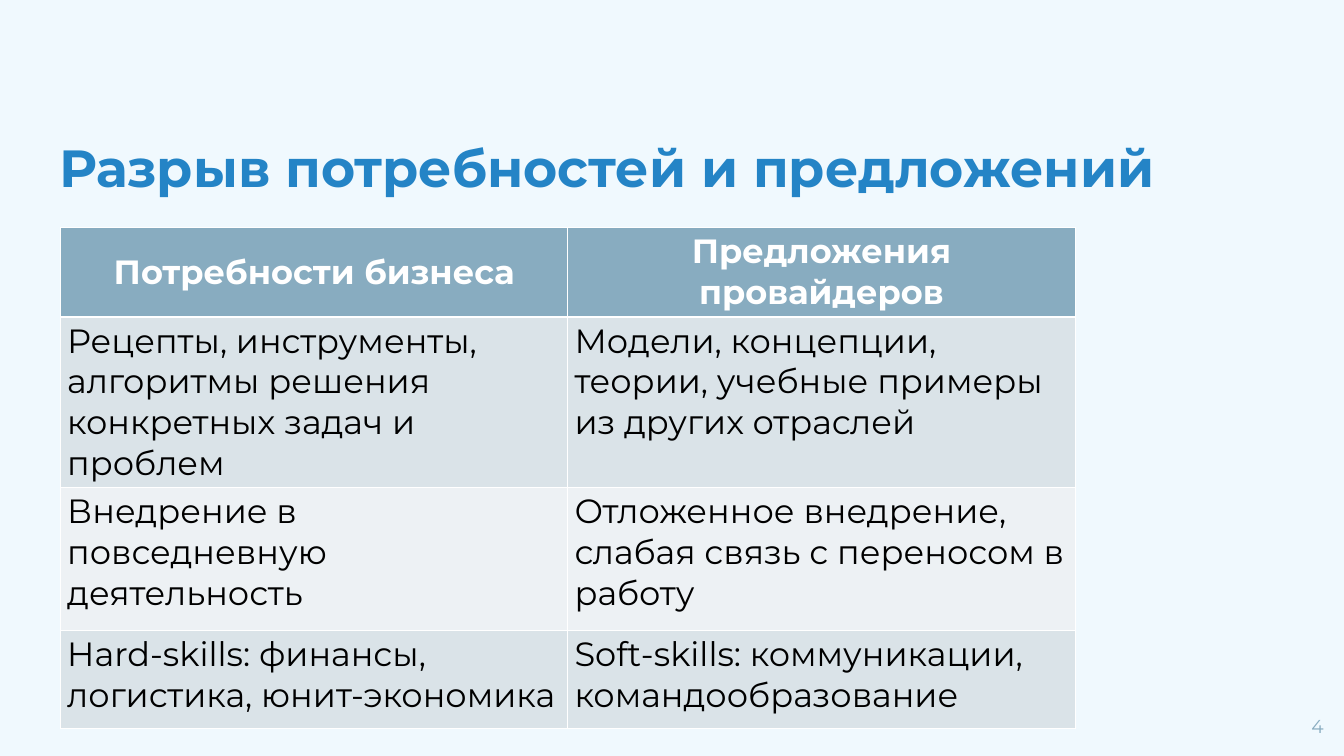
from lxml import etree
from pptx import Presentation
from pptx import util as u
from pptx.dml.color import RGBColor
from pptx.enum import text
from pptx.oxml.ns import qn

WIDTH, HEIGHT = u.Inches(20), u.Inches(11.25)
COL, ROW = WIDTH / 200, HEIGHT / 225
FONT = "Montserrat"
BLUE, STEEL, WHITE, BLACK = "2484C6", "88ACC0", "FFFFFF", "000000"
BANDS = ["DAE3E8", "EDF1F4"]
NEEDS_AND_OFFERS = [
    ("Потребности бизнеса", "Предложения провайдеров"),
    ("Рецепты, инструменты, алгоритмы решения конкретных задач и проблем",
     "Модели, концепции, теории, учебные примеры из других отраслей"),
    ("Внедрение в повседневную деятельность",
     "Отложенное внедрение, слабая связь с переносом в работу"),
    ("Hard-skills: финансы, логистика, юнит-экономика",
     "Soft-skills: коммуникации, командообразование"),
]
ROW_HEIGHTS = [26.8, 42.6, 42.6, 29.2]


def rgb(value):
    """Turn a hex string into a colour."""
    return RGBColor.from_string(value)


def grid(left, top, width, height):
    """Turn a box in grid columns and rows into slide lengths."""
    return int(left * COL), int(top * ROW), int(width * COL), int(height * ROW)


def write(tf, content, size, color, bold=False, align=text.PP_ALIGN.LEFT):
    """Fill a text frame with one formatted paragraph."""
    tf.text = content
    tf.word_wrap = True
    p = tf.paragraphs[0]
    p.alignment = align
    font = p.runs[0].font
    font.name, font.size, font.bold = FONT, u.Pt(size), bold
    font.color.rgb = rgb(color)


def place_text(sp, box, anchor):
    """Place a text shape in its box with even margins."""
    sp.left, sp.top, sp.width, sp.height = box
    tf = sp.text_frame
    tf.auto_size = text.MSO_AUTO_SIZE.NONE
    tf.vertical_anchor = anchor
    tf.margin_left = tf.margin_top = tf.margin_right = tf.margin_bottom = u.Inches(0.2)
    return tf


def add_title(s, box):
    """Format the title placeholder."""
    tf = place_text(s.shapes.title, box, text.MSO_ANCHOR.TOP)
    write(tf, "Разрыв потребностей и предложений", 56, BLUE, True)


def add_page_number(s, box):
    """Add the page number in the corner."""
    tf = place_text(s.shapes.add_textbox(*box), box, text.MSO_ANCHOR.MIDDLE)
    write(tf, "4", 20, STEEL, align=text.PP_ALIGN.RIGHT)


def set_borders(cell, bottom):
    """Draw white lines round a cell."""
    tc_pr = cell._tc.get_or_add_tcPr()
    for side, width in (("L", 1), ("R", 1), ("T", 1), ("B", bottom)):
        ln = etree.SubElement(tc_pr, qn(f"a:ln{side}"), w=str(u.Pt(width)))
        fill = etree.SubElement(ln, qn("a:solidFill"))
        etree.SubElement(fill, qn("a:srgbClr"), val=WHITE)


def add_comparison(s, box):
    """Add the table of needs and offers."""
    table = s.shapes.add_table(len(NEEDS_AND_OFFERS), 2, *box).table
    for i, pair in enumerate(NEEDS_AND_OFFERS):
        table.rows[i].height = int(box[3] * ROW_HEIGHTS[i] / sum(ROW_HEIGHTS))
        header = i == 0
        for j, content in enumerate(pair):
            cell = table.cell(i, j)
            set_borders(cell, 3 if header else 1)
            cell.fill.solid()
            cell.fill.fore_color.rgb = rgb(STEEL if header else BANDS[(i - 1) % 2])
            if header:
                cell.vertical_anchor = text.MSO_ANCHOR.MIDDLE
                write(cell.text_frame, content, 36, WHITE, True, text.PP_ALIGN.CENTER)
            else:
                write(cell.text_frame, content, 36, BLACK)


def main():
    """Build and save the slide."""
    prs = Presentation()
    prs.slide_width, prs.slide_height = WIDTH, HEIGHT
    s = prs.slides.add_slide(prs.slide_layouts[5])
    s.background.fill.solid()
    s.background.fill.fore_color.rgb = rgb("F0F9FE")
    add_title(s, grid(6.8, 36.2, 186.4, 25))
    add_page_number(s, grid(187, 207.4, 12, 17.2))
    add_comparison(s, grid(9, 67.6, 151, sum(ROW_HEIGHTS)))
    prs.save("out.pptx")


if __name__ == "__main__":
    main()
